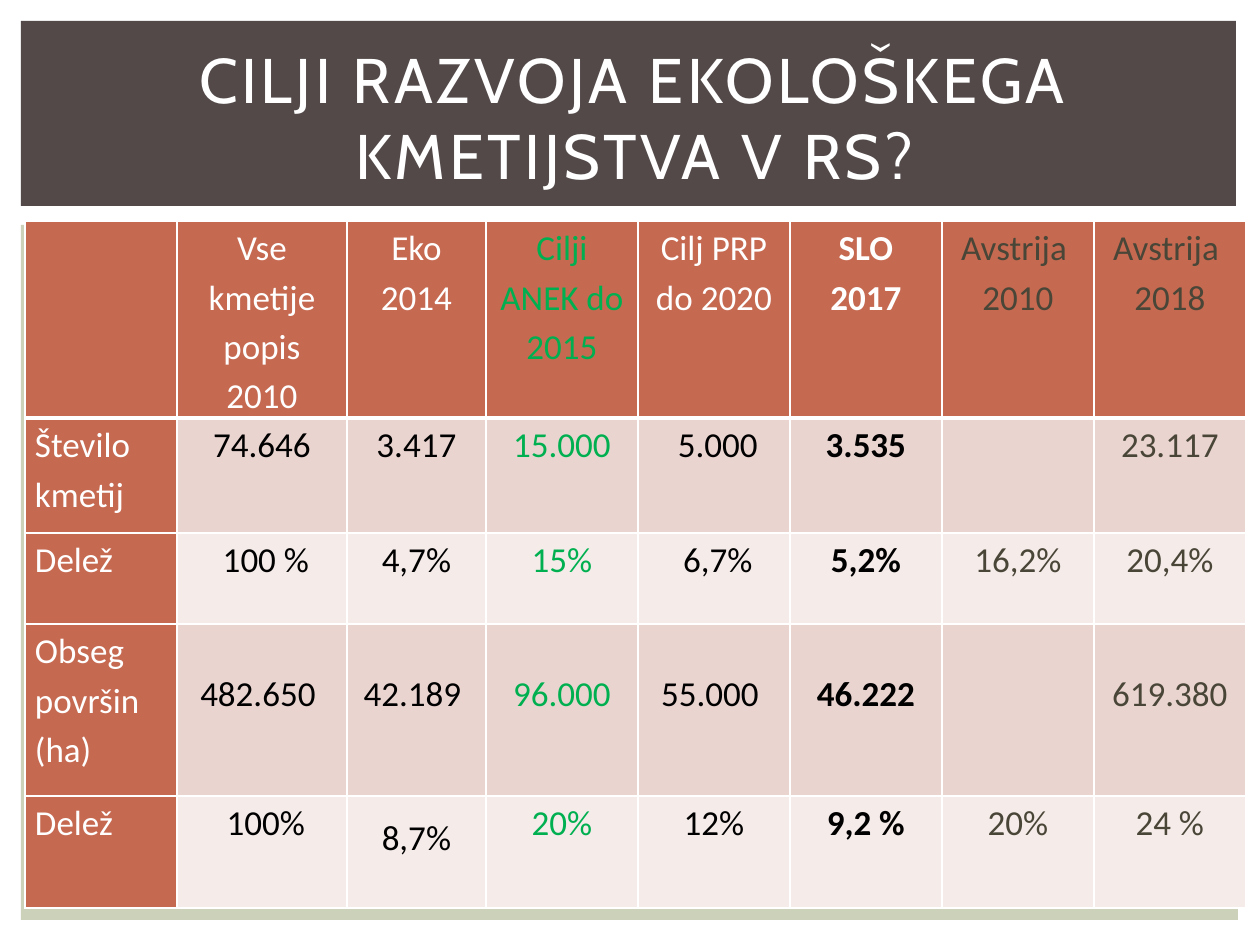
import pptx
import pptx.dml.color
import pptx.enum.shapes
import pptx.enum.text
import pptx.oxml
import pptx.oxml.ns
import pptx.util

RGB = pptx.dml.color.RGBColor
ALIGN = pptx.enum.text.PP_ALIGN
ANCHOR = pptx.enum.text.MSO_ANCHOR

WHITE = RGB(0xFF, 0xFF, 0xFF)
BLACK = RGB(0x00, 0x00, 0x00)
GREEN = RGB(0x00, 0xB0, 0x50)
OLIVE = RGB(0x49, 0x46, 0x38)
SAGE = RGB(0xCC, 0xD1, 0xB9)
BROWN = RGB(0x53, 0x49, 0x49)
RUST = RGB(0xC6, 0x69, 0x51)
BANDS = [RGB(0xEA, 0xD4, 0xD0), RGB(0xF5, 0xEB, 0xE9)]

PX_PER_INCH = 126
COL_WIDTHS = [152, 170, 139] + [152] * 5
ROW_HEIGHTS = [189, 115, 91, 172, 112]
COL_COLORS = [WHITE, BLACK, BLACK, GREEN, BLACK, BLACK, OLIVE, OLIVE]
BOLD_COL = 5
AREA_ROW = 3
AREA_DROP = 43
LOOSE_CELL = (4, 2)

ROWS = [
    ["", "Vse kmetije\npopis 2010", "Eko 2014", "Cilji ANEK do 2015",
     "Cilj PRP do 2020", "SLO\n2017", "Avstrija \n2010", "Avstrija \n2018"],
    ["Število kmetij", "74.646", "3.417", "15.000", " 5.000", "3.535", "", "23.117"],
    ["Delež", " 100 %", "4,7%", "15%", " 6,7%", "5,2%", "16,2%", "20,4%"],
    ["Obseg površin (ha)", "482.650 ", "42.189 ", "96.000", "55.000 ", "46.222", "",
     "619.380"],
    ["Delež", " 100%", "8,7%", "20%", "12%", "9,2 %", "20%", "24 %"],
]


def px(n):
    return pptx.util.Emu(round(n * 914400 / PX_PER_INCH))


def set_attrs(obj, values):
    for name, value in values.items():
        setattr(obj, name, value)


def place(obj, x, y, w, h):
    set_attrs(obj, {"left": px(x), "top": px(y), "width": px(w), "height": px(h)})


def format_font(font, color, **values):
    set_attrs(font, values)
    font.color.rgb = color


def add_panel(slide, x, y, w, h, color):
    sp = slide.shapes.add_shape(pptx.enum.shapes.MSO_SHAPE.RECTANGLE,
                                px(x), px(y), px(w), px(h))
    sp.shadow.inherit = False
    sp.fill.solid()
    sp.fill.fore_color.rgb = color
    sp.line.fill.background()


def add_title(slide, x, y, w, h):
    """Dark band with the title placeholder raised above it."""
    add_panel(slide, x, y, w, h, BROWN)
    title = slide.shapes.title
    place(title, x + 23, y + 17, w - 34, h - 28)
    slide.shapes._spTree.append(title._element)
    tf = title.text_frame
    set_attrs(tf, {"word_wrap": True, "vertical_anchor": ANCHOR.MIDDLE})
    p = tf.paragraphs[0]
    p.alignment = ALIGN.CENTER
    r = p.add_run()
    r.text = "CILJI RAZVOJA EKOLOŠKEGA KMETIJSTVA V RS?"
    format_font(r.font, WHITE, name="Cabin", size=pptx.util.Pt(36), bold=False)
    r.font._element.set("spc", "200")


def add_borders(cell, row):
    thick = {0: "lnB", 1: "lnT"}.get(row)
    tcPr = cell._tc.get_or_add_tcPr()
    for side in ("lnL", "lnR", "lnT", "lnB"):
        width = pptx.util.Pt(3 if side == thick else 1)
        tcPr.append(pptx.oxml.parse_xml(
            f'<a:{side} {pptx.oxml.ns.nsdecls("a")} w="{width}"><a:solidFill>'
            f'<a:srgbClr val="{WHITE}"/></a:solidFill></a:{side}>'))


def fill_cell(cell, row, col, text):
    header = row == 0
    add_borders(cell, row)
    cell.fill.solid()
    cell.fill.fore_color.rgb = RUST if header or col == 0 else BANDS[(row - 1) % 2]
    drop = AREA_DROP if row == AREA_ROW and col > 0 else 0
    set_attrs(cell, {"margin_left": px(10), "margin_right": px(10),
                     "margin_top": px(drop), "margin_bottom": 0})
    if not text:
        return
    color = COL_COLORS[col]
    if header and color == BLACK:
        color = WHITE
    cell.text_frame.text = text
    for p in cell.text_frame.paragraphs:
        p.alignment = ALIGN.LEFT if col == 0 else ALIGN.CENTER
        p.line_spacing = 1.5 if (row, col) == LOOSE_CELL else 1.15
        for r in p.runs:
            format_font(r.font, color, name="Calibri", size=pptx.util.Pt(20),
                        bold=col == BOLD_COL)


def add_goals_table(slide, x, y):
    frame = slide.shapes.add_table(len(ROWS), len(COL_WIDTHS), px(x), px(y),
                                   px(sum(COL_WIDTHS)), px(sum(ROW_HEIGHTS)))
    table = frame.table
    for column, width in zip(table.columns, COL_WIDTHS):
        column.width = px(width)
    for row, height in zip(table.rows, ROW_HEIGHTS):
        row.height = px(height)
    for i, texts in enumerate(ROWS):
        for j, text in enumerate(texts):
            fill_cell(table.cell(i, j), i, j, text)


def main():
    prs = pptx.Presentation()
    set_attrs(prs, {"slide_width": px(1260), "slide_height": px(945)})
    slide = prs.slides.add_slide(prs.slide_layouts[5])
    add_panel(slide, 21, 225, 1217, 695, SAGE)
    add_title(slide, 21, 21, 1215, 185)
    add_goals_table(slide, 25, 221)
    prs.save("out.pptx")


if __name__ == "__main__":
    main()
